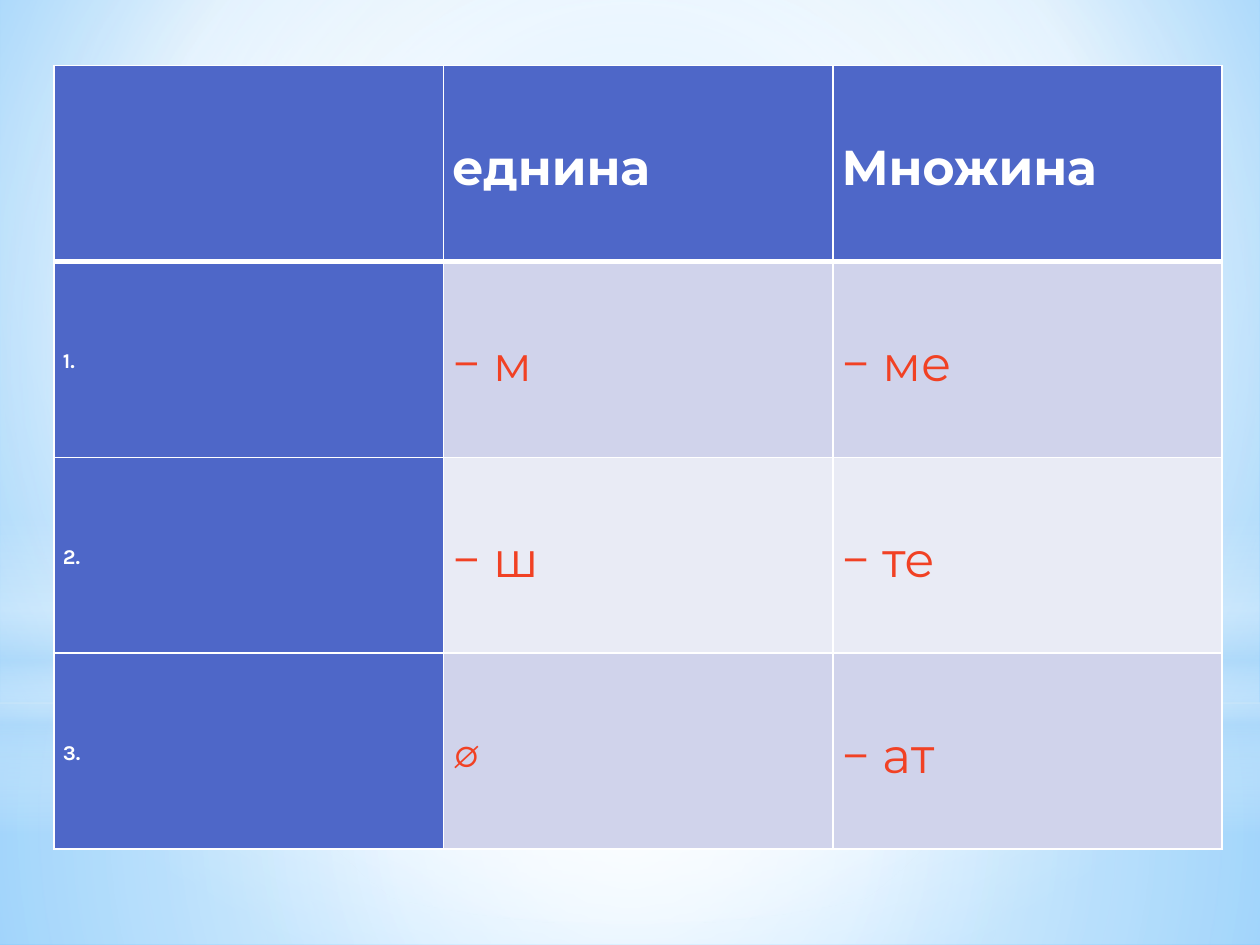
from dataclasses import dataclass
from typing import NamedTuple

from lxml import etree
from pptx import Presentation
from pptx.dml.color import RGBColor
from pptx.enum.shapes import MSO_SHAPE
from pptx.enum.text import MSO_ANCHOR, PP_ALIGN
from pptx.oxml.ns import qn
from pptx.util import Inches, Pt

RECT, OVAL = MSO_SHAPE.RECTANGLE, MSO_SHAPE.OVAL
MIDDLE, JUSTIFY = MSO_ANCHOR.MIDDLE, PP_ALIGN.JUSTIFY


@dataclass(frozen=True)
class Theme:
    white: str = "FFFFFF"
    sky: str = "B4DCFA"
    bg_inner: str = "9ED5FF"
    bg_outer: str = "5BB9FF"
    header: str = "4E67C8"
    bands: tuple = ("D0D3EB", "E9EBF5")
    ending: str = "F14124"
    body_font: str = "Montserrat"
    number_font: str = "Karla"
    body_size: int = 28
    number_size: int = 12
    line: int = 1
    header_line: int = 3


THEME = Theme()


class Stop(NamedTuple):
    pos: int
    color: str
    alpha: int = 100


class Glow(NamedTuple):
    shape: MSO_SHAPE
    top: float
    height: float
    stops: tuple
    focus: tuple | None = (50, 50, 50, 50)


W, SKY = THEME.white, THEME.sky
BACKGROUND = (Stop(0, THEME.bg_inner), Stop(60, W), Stop(100, THEME.bg_outer))
GLOWS = (
    Glow(RECT, 5.58, 1.92, (Stop(0, W, 91), Stop(37, W, 76), Stop(100, SKY, 79))),
    Glow(RECT, 0, 5.58, (Stop(0, W, 89), Stop(48, W, 62), Stop(100, SKY, 79))),
    Glow(RECT, 4.12, 2.5, (Stop(0, W, 0), Stop(29, W, 30), Stop(45, SKY, 40),
                           Stop(55, W, 26), Stop(65, SKY, 60), Stop(100, W, 0)), None),
    Glow(OVAL, 1.75, 5.58, (Stop(0, W), Stop(56, W, 0))),
)
ROWS = (
    ("", "еднина", "Множина"),
    ("1.", "− м", "− ме"),
    ("2.", "− ш", "− те"),
    ("3.", "∅", "− ат"),
)


def set_gradient(parent, stops: tuple, focus: tuple | None) -> None:
    """Replace the solid fill in parent; without a focus the gradient runs downwards."""
    solid = parent.find(qn("a:solidFill"))
    grad = etree.Element(qn("a:gradFill"), rotWithShape="1")
    stop_list = etree.SubElement(grad, qn("a:gsLst"))
    for stop in stops:
        gs = etree.SubElement(stop_list, qn("a:gs"), pos=str(stop.pos * 1000))
        color = etree.SubElement(gs, qn("a:srgbClr"), val=stop.color)
        if stop.alpha < 100:
            etree.SubElement(color, qn("a:alpha"), val=str(stop.alpha * 1000))
    if focus:
        circle = etree.SubElement(grad, qn("a:path"), {"path": "circle"})
        sides = {side: str(v * 1000) for side, v in zip("ltrb", focus)}
        etree.SubElement(circle, qn("a:fillToRect"), sides)
    else:
        etree.SubElement(grad, qn("a:lin"), ang="5400000", scaled="0")
    parent.replace(solid, grad)


def add_glow(slide, glow: Glow) -> None:
    sp = slide.shapes.add_shape(glow.shape, 0, Inches(glow.top), Inches(10), Inches(glow.height))
    sp.shadow.inherit = False
    sp.line.fill.background()
    sp.fill.solid()
    set_gradient(sp._element.spPr, glow.stops, glow.focus)


def set_borders(cell, **widths: int) -> None:
    """Draw the cell's sides, given as L, R, T and B in points."""
    tc_pr = cell._tc.get_or_add_tcPr()
    for i, (side, width) in enumerate(widths.items()):
        ln = etree.Element(qn(f"a:ln{side}"), w=str(Pt(width)))
        fill = etree.SubElement(ln, qn("a:solidFill"))
        etree.SubElement(fill, qn("a:srgbClr"), val=THEME.white)
        tc_pr.insert(i, ln)


def write(tf, text: str, *, font: str, size: int, color: str, bold: bool) -> None:
    p = tf.paragraphs[0]
    p.alignment = JUSTIFY
    p.line_spacing = 1.15
    p.space_before = p.space_after = Pt(12)
    r = p.add_run()
    r.text = text
    r.font.name, r.font.size, r.font.bold = font, Pt(size), bold
    r.font.color.rgb = RGBColor.from_string(color)


def fill_cell(cell, text: str, row: int, col: int) -> None:
    is_header = row == 0 or col == 0
    is_number = col == 0
    cell.fill.solid()
    cell.fill.fore_color.rgb = RGBColor.from_string(
        THEME.header if is_header else THEME.bands[(row - 1) % 2])
    set_borders(cell, L=THEME.line, R=THEME.line,
                T=THEME.header_line if row == 1 else THEME.line,
                B=THEME.header_line if row == 0 else THEME.line)
    cell.vertical_anchor = MIDDLE
    cell.margin_left = cell.margin_right = Inches(0.07)
    cell.margin_top = cell.margin_bottom = Inches(0.03)
    if text:
        write(cell.text_frame, text, bold=is_header,
              font=THEME.number_font if is_number else THEME.body_font,
              size=THEME.number_size if is_number else THEME.body_size,
              color=THEME.white if is_header else THEME.ending)


def add_endings_table(slide) -> None:
    table = slide.shapes.add_table(len(ROWS), len(ROWS[0]), Inches(0.43), Inches(0.52),
                                   Inches(9.27), Inches(6.22)).table
    for row, texts in enumerate(ROWS):
        for col, text in enumerate(texts):
            fill_cell(table.cell(row, col), text, row, col)


def main() -> None:
    prs = Presentation()
    prs.slide_width, prs.slide_height = Inches(10), Inches(7.5)
    slide = prs.slides.add_slide(prs.slide_layouts[6])
    slide.background.fill.solid()
    set_gradient(slide._element.find(f".//{qn('p:bgPr')}"), BACKGROUND, (20, 10, 20, 60))
    for glow in GLOWS:
        add_glow(slide, glow)
    add_endings_table(slide)
    prs.save("out.pptx")


if __name__ == "__main__":
    main()
